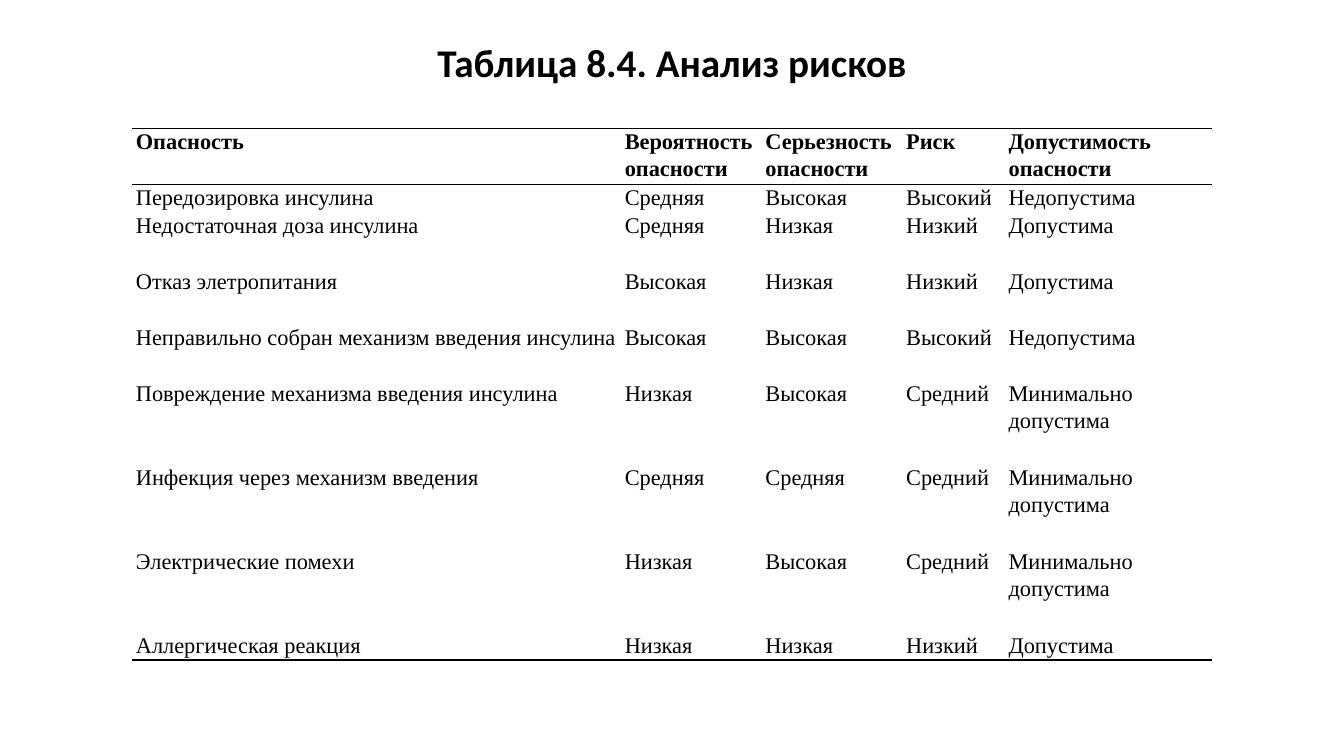
from dataclasses import dataclass

from lxml.etree import SubElement
from pptx import Presentation
from pptx.dml.color import RGBColor
from pptx.enum.text import MSO_ANCHOR, MSO_AUTO_SIZE, PP_ALIGN
from pptx.oxml.ns import qn
from pptx.slide import Slide
from pptx.table import _Cell
from pptx.text.text import _Paragraph
from pptx.util import Pt


@dataclass(frozen=True)
class Theme:
    ink: str = "000000"
    paper: str = "FFFFFF"
    title_font: str = "Calibri"
    table_font: str = "Times New Roman"
    title_size: float = 28
    table_size: float = 16
    rule_width: float = 1
    side_inset: float = 2.8


@dataclass(frozen=True)
class Column:
    heading: str
    width: float


@dataclass(frozen=True)
class Hazard:
    name: str
    probability: str
    severity: str
    risk: str
    tolerance: str
    lines: int

    def texts(self) -> list[str]:
        return [self.name, self.probability, self.severity, self.risk, self.tolerance]


THEME = Theme()
LINE_HEIGHT = 20
HEADER_LINES = 2
TABLE_LEFT, TABLE_TOP = 94.3, 91.5

COLUMNS = [
    Column("Опасность", 349.2),
    Column("Вероятность опасности", 100.5),
    Column("Серьезность опасности", 100.5),
    Column("Риск", 73.2),
    Column("Допустимость опасности", 147.8),
]

HAZARDS = [
    Hazard("Передозировка инсулина", "Средняя", "Высокая", "Высокий", "Недопустима", 1),
    Hazard("Недостаточная доза инсулина", "Средняя", "Низкая", "Низкий", "Допустима", 2),
    Hazard("Отказ элетропитания", "Высокая", "Низкая", "Низкий", "Допустима", 2),
    Hazard("Неправильно собран механизм введения инсулина",
           "Высокая", "Высокая", "Высокий", "Недопустима", 2),
    Hazard("Повреждение механизма введения инсулина",
           "Низкая", "Высокая", "Средний", "Минимально допустима", 3),
    Hazard("Инфекция через механизм введения",
           "Средняя", "Средняя", "Средний", "Минимально допустима", 3),
    Hazard("Электрические помехи",
           "Низкая", "Высокая", "Средний", "Минимально допустима", 3),
    Hazard("Аллергическая реакция", "Низкая", "Низкая", "Низкий", "Допустима", 1),
]


def format_runs(paragraph: _Paragraph, font_name: str, size: float, bold: bool) -> None:
    for run in paragraph.runs:
        run.font.name = font_name
        run.font.size = Pt(size)
        run.font.bold = bold
        run.font.color.rgb = RGBColor.from_string(THEME.ink)


def rule_cell(cell: _Cell, above: bool, below: bool) -> None:
    """Draw the horizontal rules of a cell and clear its other borders."""
    properties = cell._tc.get_or_add_tcPr()
    edges = {"a:lnL": False, "a:lnR": False, "a:lnT": above, "a:lnB": below}
    for edge, ruled in edges.items():
        border = SubElement(properties, qn(edge), w=str(Pt(THEME.rule_width)))
        if ruled:
            fill = SubElement(border, qn("a:solidFill"))
            SubElement(fill, qn("a:srgbClr"), val=THEME.ink)
        else:
            SubElement(border, qn("a:noFill"))


def fill_cell(cell: _Cell, text: str, bold: bool) -> None:
    cell.margin_left = cell.margin_right = Pt(THEME.side_inset)
    cell.margin_top = cell.margin_bottom = 0
    cell.vertical_anchor = MSO_ANCHOR.TOP
    cell.fill.solid()
    cell.fill.fore_color.rgb = RGBColor.from_string(THEME.paper)
    cell.text_frame.text = text
    paragraph = cell.text_frame.paragraphs[0]
    paragraph.line_spacing = 1.07
    format_runs(paragraph, THEME.table_font, THEME.table_size, bold)


def add_title(slide: Slide, text: str) -> None:
    title = slide.shapes.title
    title.left, title.top, title.width, title.height = Pt(66), Pt(27.4), Pt(828), Pt(41.8)
    frame = title.text_frame
    frame.text = text
    frame.auto_size = MSO_AUTO_SIZE.NONE
    frame.vertical_anchor = MSO_ANCHOR.TOP
    paragraph = frame.paragraphs[0]
    paragraph.alignment = PP_ALIGN.CENTER
    paragraph.line_spacing = 0.9
    paragraph.space_before = Pt(10)
    format_runs(paragraph, THEME.title_font, THEME.title_size, bold=True)


def add_risk_table(slide: Slide, columns: list[Column], hazards: list[Hazard]) -> None:
    rows = [[column.heading for column in columns]] + [hazard.texts() for hazard in hazards]
    line_counts = [HEADER_LINES] + [hazard.lines for hazard in hazards]
    table = slide.shapes.add_table(
        len(rows), len(columns), Pt(TABLE_LEFT), Pt(TABLE_TOP),
        Pt(sum(column.width for column in columns)), Pt(LINE_HEIGHT * sum(line_counts)),
    ).table
    table.first_row = table.horz_banding = False
    for table_column, column in zip(table.columns, columns):
        table_column.width = Pt(column.width)

    last = len(rows) - 1
    for index, (texts, line_count) in enumerate(zip(rows, line_counts)):
        table.rows[index].height = Pt(LINE_HEIGHT * line_count)
        for cell, text in zip(table.rows[index].cells, texts):
            rule_cell(cell, above=index in (0, 1), below=index in (0, last))
            fill_cell(cell, text, bold=index == 0)


def main() -> None:
    presentation = Presentation()
    presentation.slide_width, presentation.slide_height = Pt(960), Pt(540)
    title_only = presentation.slide_layouts.get_by_name("Title Only")
    slide = presentation.slides.add_slide(title_only)
    add_title(slide, "Таблица 8.4. Анализ рисков")
    add_risk_table(slide, COLUMNS, HAZARDS)
    presentation.save("out.pptx")


if __name__ == "__main__":
    main()
